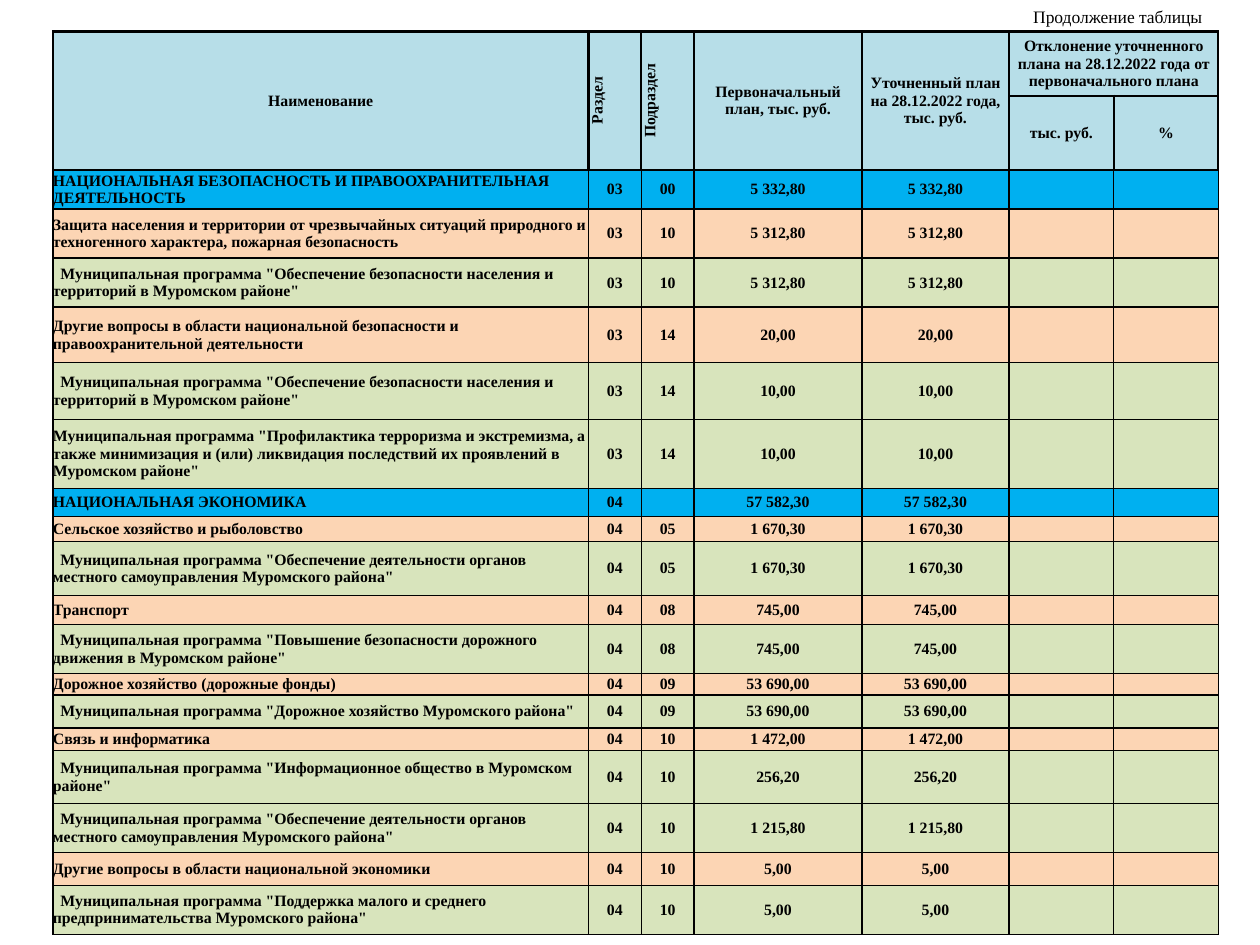
from dataclasses import dataclass

from lxml.etree import SubElement
from pptx import Presentation
from pptx.dml.color import RGBColor as RGB
from pptx.enum.text import MSO_ANCHOR as Anchor, MSO_AUTO_SIZE as AutoSize, PP_ALIGN as Align
from pptx.oxml.ns import qn
from pptx.util import Inches, Pt


@dataclass(frozen=True)
class Theme:
    font: str = "Times New Roman"
    ink: str = "000000"
    header: str = "B7DEE8"
    section: str = "00B0F0"
    group: str = "FCD5B4"
    program: str = "D8E4BC"
    cell_size: int = 9
    caption_size: int = 10
    thin: float = 1
    thick: float = 1.5


T = Theme()
PROGRAM_INDENT = Inches(0.06)


def style_text(p, size, bold, align):
    p.alignment = align
    for r in p.runs:
        r.font.name, r.font.size, r.font.bold = T.font, Pt(size), bold
        r.font.color.rgb = RGB.from_string(T.ink)


def fill_cell(cell, text, fill, align=Align.CENTER, width=T.thin, bottom=T.thin):
    """Write one cell; width is the border on every side except the bottom."""
    cell.margin_left = cell.margin_right = cell.margin_top = cell.margin_bottom = 0
    cell.vertical_anchor = Anchor.MIDDLE
    tc_pr = cell._tc.get_or_add_tcPr()
    for side, w in (("L", width), ("R", width), ("T", width), ("B", bottom)):
        ln = SubElement(tc_pr, qn(f"a:ln{side}"), w=str(Pt(w)))
        SubElement(SubElement(ln, qn("a:solidFill")), qn("a:srgbClr"), val=T.ink)
    cell.fill.solid()
    cell.fill.fore_color.rgb = RGB.from_string(fill)
    p = cell.text_frame.paragraphs[0]
    p.text = text
    style_text(p, T.cell_size, True, align)
    if not text:  # keeps an empty cell from stretching its row
        SubElement(p._p, qn("a:endParaRPr"), sz=str(T.cell_size * 100))


COLUMNS = [4.25, 0.42, 0.42, 1.33, 1.17, 0.83, 0.83]
HEADER_HEIGHTS = [0.51, 0.39]
HEADERS = [
    ["Наименование", "Раздел", "Подраздел", "Первоначальный план, тыс. руб.",
     "Уточненный план на 28.12.2022 года, тыс. руб.",
     "Отклонение уточненного плана на 28.12.2022 года от первоначального плана", ""],
    ["", "", "", "", "", "тыс. руб.", "%"],
]
# height, fill, indent, name, section, subsection, amount (initial and revised plans agree)
ROWS = [
    (0.31, T.section, 0, "НАЦИОНАЛЬНАЯ БЕЗОПАСНОСТЬ И ПРАВООХРАНИТЕЛЬНАЯ ДЕЯТЕЛЬНОСТЬ",
     "03", "00", "5 332,80"),
    (0.39, T.group, 0, "Защита населения и территории от чрезвычайных ситуаций природного "
     "и техногенного характера, пожарная безопасность", "03", "10", "5 312,80"),
    (0.39, T.program, PROGRAM_INDENT, 'Муниципальная программа "Обеспечение безопасности '
     'населения и территорий в Муромском районе"', "03", "10", "5 312,80"),
    (0.44, T.group, 0, "Другие вопросы в области национальной безопасности и "
     "правоохранительной деятельности", "03", "14", "20,00"),
    (0.45, T.program, PROGRAM_INDENT, 'Муниципальная программа "Обеспечение безопасности '
     'населения и территорий в Муромском районе"', "03", "14", "10,00"),
    (0.55, T.program, 0, 'Муниципальная программа "Профилактика терроризма и экстремизма, '
     'а также минимизация и (или) ликвидация последствий их проявлений в Муромском районе"',
     "03", "14", "10,00"),
    (0.22, T.section, 0, "НАЦИОНАЛЬНАЯ ЭКОНОМИКА", "04", "", "57 582,30"),
    (0.20, T.group, 0, "Сельское хозяйство и рыболовство", "04", "05", "1 670,30"),
    (0.43, T.program, PROGRAM_INDENT, 'Муниципальная программа "Обеспечение деятельности '
     'органов местного самоуправления Муромского района"', "04", "05", "1 670,30"),
    (0.23, T.group, 0, "Транспорт", "04", "08", "745,00"),
    (0.39, T.program, PROGRAM_INDENT, 'Муниципальная программа "Повышение безопасности '
     'дорожного движения в Муромском районе"', "04", "08", "745,00"),
    (0.17, T.group, 0, "Дорожное хозяйство (дорожные фонды)", "04", "09", "53 690,00"),
    (0.26, T.program, PROGRAM_INDENT, 'Муниципальная программа "Дорожное хозяйство '
     'Муромского района"', "04", "09", "53 690,00"),
    (0.18, T.group, 0, "Связь и информатика", "04", "10", "1 472,00"),
    (0.42, T.program, PROGRAM_INDENT, 'Муниципальная программа "Информационное общество '
     'в Муромском районе"', "04", "10", "256,20"),
    (0.39, T.program, PROGRAM_INDENT, 'Муниципальная программа "Обеспечение деятельности '
     'органов местного самоуправления Муромского района"', "04", "10", "1 215,80"),
    (0.26, T.group, 0, "Другие вопросы в области национальной экономики", "04", "10", "5,00"),
    (0.39, T.program, PROGRAM_INDENT, 'Муниципальная программа "Поддержка малого и среднего '
     'предпринимательства Муромского района"', "04", "10", "5,00"),
]

prs = Presentation()
prs.slide_width, prs.slide_height = Inches(10), Inches(7.5)
s = prs.slides.add_slide(prs.slide_layouts[6])

heights = HEADER_HEIGHTS + [row[0] for row in ROWS]
table = s.shapes.add_table(len(heights), len(COLUMNS), Inches(0.42), Inches(0.25),
                           Inches(sum(COLUMNS)), Inches(sum(heights))).table
table.first_row = table.horz_banding = False
for column, width in zip(table.columns, COLUMNS):
    column.width = Inches(width)
for row, height in zip(table.rows, heights):
    row.height = Inches(height)

# Header: the first five columns span both rows, the last two share a title
for i, labels in enumerate(HEADERS):
    for j, label in enumerate(labels):
        bottom = T.thick if i == 0 and j >= 5 else T.thin
        fill_cell(table.cell(i, j), label, T.header, width=T.thick, bottom=bottom)
for j in range(5):
    table.cell(0, j).merge(table.cell(1, j))
table.cell(0, 5).merge(table.cell(0, 6))
for j in (1, 2):
    table.cell(0, j)._tc.get_or_add_tcPr().set("vert", "vert270")

# Budget lines; the two deviation columns stay empty
for i, (_, fill, indent, name, section, subsection, amount) in enumerate(ROWS, len(HEADERS)):
    for j, text in enumerate([name, section, subsection, amount, amount, "", ""]):
        fill_cell(table.cell(i, j), text, fill, Align.CENTER if j else Align.LEFT)
    if indent:
        p = table.cell(i, 0).text_frame.paragraphs[0]
        p._p.get_or_add_pPr().set("indent", str(indent))

caption = s.shapes.add_textbox(Inches(7.92), 0, Inches(1.75), Inches(0.27))
tf = caption.text_frame
tf.word_wrap = True
tf.auto_size = AutoSize.SHAPE_TO_FIT_TEXT
tf.margin_right = Inches(0.13)
tf.text = "Продолжение таблицы"
style_text(tf.paragraphs[0], T.caption_size, False, Align.RIGHT)

prs.save("out.pptx")
